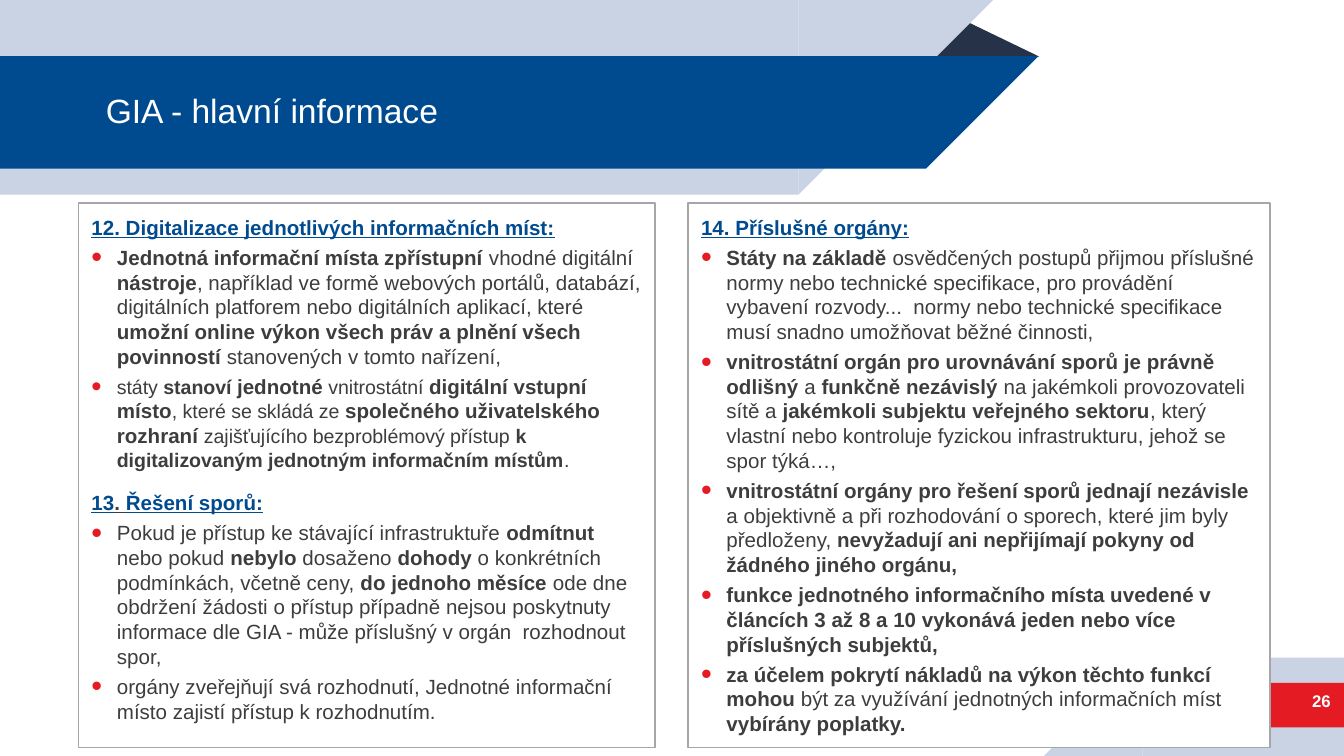
import lxml.etree
import pptx
import pptx.dml.color
import pptx.enum.shapes
import pptx.enum.text
import pptx.oxml.ns
import pptx.util
from pptx.util import Cm

RGBColor = pptx.dml.color.RGBColor
SHAPE = pptx.enum.shapes.MSO_SHAPE
ALIGN = pptx.enum.text.PP_ALIGN
ANCHOR = pptx.enum.text.MSO_ANCHOR

WHITE = RGBColor(0xFF, 0xFF, 0xFF)
BLUE = RGBColor(0x00, 0x4B, 0x8F)
PALE = RGBColor(0xCA, 0xD3, 0xE3)
NAVY = RGBColor(0x26, 0x32, 0x48)
RED = RGBColor(0xE4, 0x1B, 0x23)
GREY = RGBColor(0xA6, 0xA6, 0xA6)
INK = RGBColor(0x3D, 0x3D, 0x3D)

FONT = "Arial"
SIZE = 11
SMALL = 10.5


def plain(text, size=SIZE):
    return text, False, size


def bold(text, size=SIZE):
    return text, True, size


# Each section: heading spans with their colours, then its bullets.
DIGITAL = (
    [("12. Digitalizace jednotlivých informačních míst:", BLUE)],
    [
        [bold("Jednotná informační místa zpřístupní"), plain(" vhodné digitální "),
         bold("nástroje"),
         plain(", například ve formě webových portálů, databází, digitálních "
               "platforem nebo digitálních aplikací, které "),
         bold("umožní online výkon všech práv a plnění všech povinností"),
         plain(" stanovených v tomto nařízení,")],
        [plain("státy ", SMALL), bold("stanoví ", SMALL), bold("jednotné"),
         plain(" vnitrostátní ", SMALL), bold("digitální vstupní místo"),
         plain(", které se skládá ze ", SMALL),
         bold("společného uživatelského rozhraní "),
         plain("zajišťujícího bezproblémový přístup ", SMALL),
         bold("k digitalizovaným jednotným informačním místům", SMALL),
         plain(".", SMALL)],
    ],
)
DISPUTES = (
    [("13", BLUE), (". ", INK), ("Řešení sporů:", BLUE)],
    [
        [plain("Pokud je přístup ke stávající infrastruktuře "), bold("odmítnut"),
         plain(" nebo pokud "), bold("nebylo"), plain(" dosaženo "), bold("dohody"),
         plain(" o konkrétních podmínkách, včetně ceny, "),
         bold("do jednoho měsíce "),
         plain("ode dne obdržení žádosti o přístup případně nejsou poskytnuty "
               "informace dle GIA - může příslušný v orgán  rozhodnout spor,")],
        [plain("orgány zveřejňují svá rozhodnutí, Jednotné informační místo "
               "zajistí přístup k rozhodnutím.")],
    ],
)
AUTHORITIES = (
    [("14. Příslušné orgány:", BLUE)],
    [
        [bold("Státy na základě "),
         plain("osvědčených postupů přijmou příslušné normy nebo technické "
               "specifikace, pro provádění vybavení rozvody...  normy nebo "
               "technické specifikace musí snadno umožňovat běžné činnosti,")],
        [bold("vnitrostátní orgán pro urovnávání sporů je právně odlišný "),
         plain("a "), bold("funkčně nezávislý "),
         plain("na jakémkoli provozovateli sítě a "),
         bold("jakémkoli subjektu veřejného sektoru"),
         plain(", který vlastní nebo kontroluje fyzickou infrastrukturu, "
               "jehož se spor týká…,")],
        [bold("vnitrostátní orgány pro řešení sporů jednají nezávisle "),
         plain("a objektivně a při rozhodování o sporech, které jim byly předloženy, "),
         bold("nevyžadují ani nepřijímají pokyny od žádného jiného orgánu,")],
        [bold("funkce jednotného informačního místa uvedené v článcích 3 až 8 a 10 "
              "vykonává jeden nebo více příslušných subjektů,")],
        [bold("za účelem pokrytí nákladů na výkon těchto funkcí mohou "),
         plain("být za využívání jednotných informačních míst "),
         bold("vybírány poplatky.")],
    ],
)


def add_block(page, kind, left, top, width, height, colour):
    block = page.shapes.add_shape(kind, Cm(left), Cm(top), Cm(width), Cm(height))
    block.shadow.inherit = False
    block.fill.solid()
    block.fill.fore_color.rgb = colour
    block.line.fill.background()
    return block


def add_corner(page, left, top, side, colour, turn):
    """Add a square right triangle, turned clockwise by the given degrees."""
    corner = add_block(page, SHAPE.RIGHT_TRIANGLE, left, top, side, side, colour)
    corner.rotation = turn


def add_top_band(page, top, width, height, colour):
    add_block(page, SHAPE.RECTANGLE, 0, top, width, height, colour)
    add_corner(page, width, top, height, colour, 90)


def add_span(para, text, size, colour, is_bold=False, underline=False):
    span = para.add_run()
    span.text = text
    span.font.name = FONT
    span.font.size = pptx.util.Pt(size)
    span.font.color.rgb = colour
    span.font.bold = is_bold
    span.font.underline = underline


def add_label(page, left, top, width, height, text, size, align, is_bold=False):
    box = page.shapes.add_textbox(Cm(left), Cm(top), Cm(width), Cm(height))
    frame = box.text_frame
    frame.word_wrap = True
    frame.vertical_anchor = ANCHOR.MIDDLE
    para = frame.paragraphs[0]
    para.alignment = align
    para.line_spacing = 0.9
    add_span(para, text, size, WHITE, is_bold)


def set_bullet(para):
    props = para._p.get_or_add_pPr()
    indent = Cm(0.48)
    props.set("marL", str(indent))
    props.set("indent", str(-indent))

    def add(parent, tag, **values):
        return lxml.etree.SubElement(parent, pptx.oxml.ns.qn(tag), **values)

    add(add(props, "a:buClr"), "a:srgbClr", val=str(RED))
    add(props, "a:buSzPct", val="150000")
    add(props, "a:buFont", typeface=FONT)
    add(props, "a:buChar", char="•")


def add_panel(page, left, width, sections):
    panel = add_block(page, SHAPE.RECTANGLE, left, 3.84, width, 10.29, WHITE)
    panel.line.color.rgb = GREY
    panel.line.width = pptx.util.Pt(0.75)
    frame = panel.text_frame
    frame.word_wrap = True
    frame.vertical_anchor = ANCHOR.TOP
    for index, (heading, bullets) in enumerate(sections):
        para = frame.add_paragraph() if index else frame.paragraphs[0]
        para.alignment = ALIGN.LEFT
        para.line_spacing = 1.2
        if index:
            para.space_before = pptx.util.Pt(7.5)
        for text, colour in heading:
            add_span(para, text, SIZE, colour, True, True)
        for spans in bullets:
            para = frame.add_paragraph()
            set_bullet(para)
            para.alignment = ALIGN.LEFT
            para.line_spacing = 1.0
            para.space_before = pptx.util.Pt(3)
            for text, is_bold, size in spans:
                add_span(para, text, size, INK, is_bold)


def add_decoration(page):
    fold = add_block(page, SHAPE.ISOSCELES_TRIANGLE, 17.48, 0.36, 2.16, 0.71, NAVY)
    fold.adjustments[0] = 0.32
    add_top_band(page, 0, 15.09, 3.68, PALE)
    add_top_band(page, 1.06, 17.5, 2.13, BLUE)
    add_block(page, SHAPE.RECTANGLE, 21.59, 12.43, 3.81, 1.86, PALE)
    add_corner(page, 19.73, 12.43, 1.86, PALE, 270)
    add_block(page, SHAPE.RECTANGLE, 20.14, 12.91, 5.26, 0.84, RED)


def main():
    deck = pptx.Presentation()
    deck.slide_width, deck.slide_height = Cm(25.4), Cm(14.29)
    page = deck.slides.add_slide(deck.slide_layouts[6])
    add_decoration(page)
    add_label(page, 1.75, 1.06, 17.27, 2.13, "GIA - hlavní informace", 18, ALIGN.LEFT)
    add_label(page, 22.73, 12.9, 2.67, 0.76, "26", 9, ALIGN.RIGHT, True)
    add_panel(page, 1.48, 10.9, [DIGITAL, DISPUTES])
    add_panel(page, 13, 11, [AUTHORITIES])
    deck.save("out.pptx")


if __name__ == "__main__":
    main()
